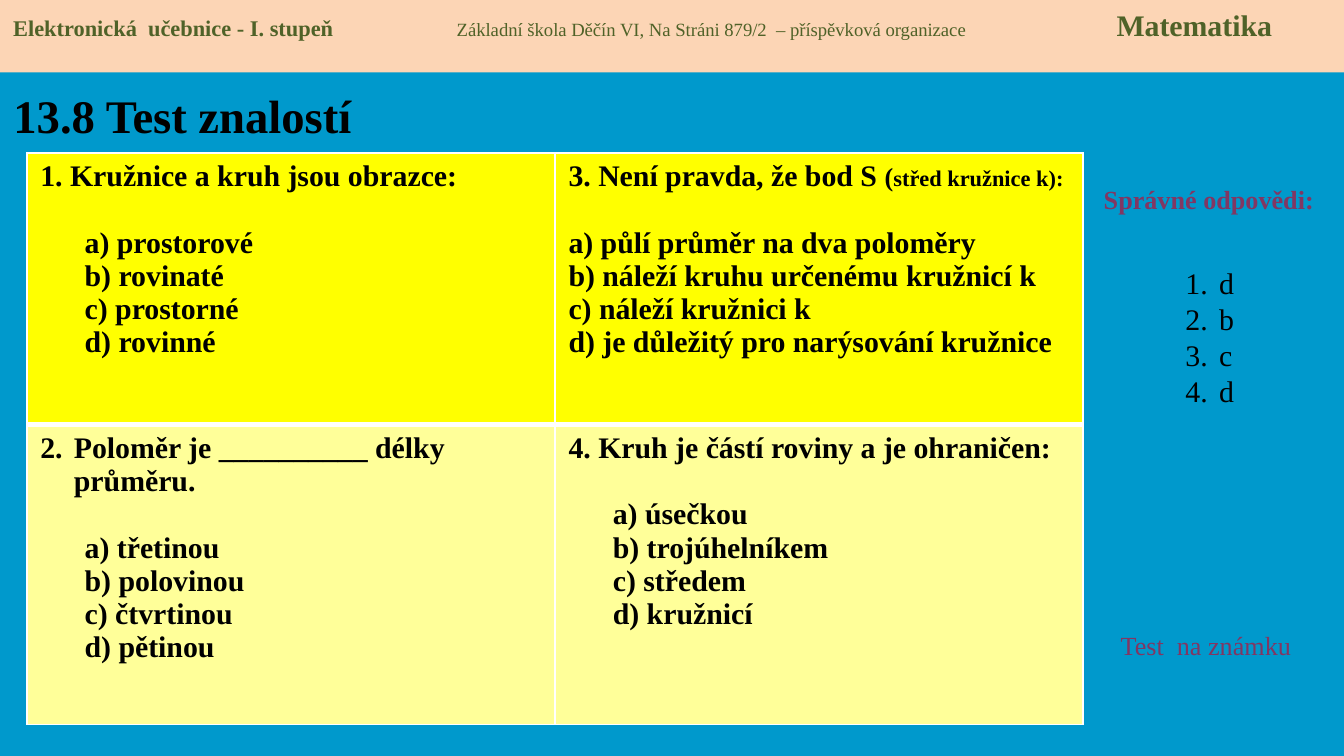
from lxml.etree import SubElement as Sub
from pptx import Presentation as Deck
from pptx.dml.color import RGBColor as Rgb
from pptx.enum.shapes import MSO_SHAPE as Shape
from pptx.enum.text import MSO_ANCHOR as Anchor, MSO_AUTO_SIZE as Fit, PP_ALIGN as Align
from pptx.oxml import parse_xml as parse
from pptx.oxml.ns import nsdecls, qn
from pptx.util import Inches, Pt

FONT = "Times New Roman"
BLACK, WHITE, PLUM, GREEN = "000000", "FFFFFF", "813763", "4F6228"


def tint(fill, code):
    fill.solid()
    fill.fore_color.rgb = Rgb.from_string(code)


def write(par, text, size=16, bold=False, color=BLACK, align=Align.LEFT, after=0):
    par.alignment = align
    par.space_before, par.space_after = Pt(0), Pt(after)
    run = par.add_run()
    run.text = text
    font = run.font
    font.name, font.size, font.bold = FONT, Pt(size), bold
    font.color.rgb = Rgb.from_string(color)


def indent(par, left, first=0):
    props = par._p.get_or_add_pPr()
    props.set("marL", str(Inches(left)))
    props.set("indent", str(Inches(first)))
    return props


def count(par, start=1):
    props = indent(par, 0.25, -0.25)
    Sub(props, qn("a:buFont"), typeface=FONT)
    Sub(props, qn("a:buAutoNum"), type="arabicPeriod", startAt=str(start))


def tabs(par, stops):
    stop_list = Sub(par._p.get_or_add_pPr(), qn("a:tabLst"))
    for stop in stops:
        Sub(stop_list, qn("a:tab"), pos=str(Inches(stop)), algn="l")


def border(cell, sides):
    props = cell._tc.get_or_add_tcPr()
    for spot, (side, width) in enumerate(sides.items()):
        props.insert(spot, parse(
            f'<a:ln{side} {nsdecls("a")} w="{Pt(width)}"><a:solidFill>'
            f'<a:srgbClr val="{WHITE}"/></a:solidFill></a:ln{side}>'))


class Page:
    def __init__(self, back):
        self.deck = Deck()
        self.deck.slide_width, self.deck.slide_height = Inches(10), Inches(10 * 9 / 16)
        self.slide = self.deck.slides.add_slide(self.deck.slide_layouts[1])
        self.shapes = self.slide.shapes
        tint(self.slide.background.fill, back)

    def area(self, left, top, width, height):
        wide, high = self.deck.slide_width, self.deck.slide_height
        return [int(part * whole / 100) for part, whole in
                zip((left, top, width, height), (wide, high, wide, high))]

    def place(self, holder, box):
        holder.left, holder.top, holder.width, holder.height = self.area(*box)
        frame = holder.text_frame
        frame.auto_size, frame.word_wrap = Fit.NONE, True
        return frame

    def title(self, text, box):
        frame = self.place(self.shapes.title, box)
        frame.vertical_anchor = Anchor.MIDDLE
        write(frame.paragraphs[0], text, size=25, bold=True)

    def list(self, items, box):
        frame = self.place(self.slide.placeholders[1], box)
        frame.vertical_anchor = Anchor.TOP
        frame.margin_top, frame.margin_right = Inches(0.32), 0
        for spot, item in enumerate(items):
            par = frame.add_paragraph() if spot else frame.paragraphs[0]
            write(par, item)
            count(par)

    def label(self, text, box, **style):
        frame = self.shapes.add_textbox(*self.area(*box)).text_frame
        frame.word_wrap = True
        write(frame.paragraphs[0], text, size=14, color=PLUM, **style)

    def banner(self, parts, stops, box, color):
        bar = self.shapes.add_shape(Shape.RECTANGLE, *self.area(*box))
        bar.shadow.inherit = False
        tint(bar.fill, color)
        bar.line.fill.background()
        frame = bar.text_frame
        frame.vertical_anchor = Anchor.TOP
        par = frame.paragraphs[0]
        for text, size, bold in parts:
            write(par, text, size=size, bold=bold, color=GREEN)
        tabs(par, stops)

    def quiz(self, rows, fills, highs, box):
        grid = self.shapes.add_table(len(rows), len(rows[0]), *self.area(*box)).table
        for row, (tasks, fill, high) in enumerate(zip(rows, fills, highs)):
            grid.rows[row].height = self.area(0, 0, 0, high)[3]
            for col, task in enumerate(tasks):
                cell = grid.cell(row, col)
                tint(cell.fill, fill)
                border(cell, {"L": 1, "R": 1, "T": 3 if row else 1, "B": 1 if row else 3})
                self.task(cell.text_frame, *task)

    def task(self, frame, start, left, parts, answers):
        head = frame.paragraphs[0]
        for text, size in parts:
            write(head, text, size=size, bold=True, after=18)
        if start:
            count(head, start)
        for answer in answers:
            par = frame.add_paragraph()
            write(par, answer, bold=True)
            indent(par, left)

    def save(self):
        self.deck.save("out.pptx")


ROWS = [
    [(0, 0.33, [("1. Kružnice a kruh jsou obrazce:", 16)],
      ["a) prostorové", "b) rovinaté", "c) prostorné", "d) rovinné"]),
     (0, 0, [("3. Není pravda, že bod S ", 16), ("(", 14), ("střed kružnice k):", 12)],
      ["a) půlí průměr na dva poloměry", "b) náleží kruhu určenému kružnicí k",
       "c) náleží kružnici k", "d) je důležitý pro narýsování kružnice"])],
    [(2, 0.33, [("Poloměr je __________ délky průměru.", 16)],
      ["a) třetinou", "b) polovinou", "c) čtvrtinou", "d) pětinou"]),
     (0, 0.33, [("4. Kruh je částí roviny a je ohraničen:", 16)],
      ["a) úsečkou", "b) trojúhelníkem", "c) středem", "d) kružnicí"])],
]
HEAD = [("Elektronická  učebnice - I. stupeň\t", 12, True),
        ("Základní škola Děčín VI, Na Stráni 879/2  – příspěvková organizace\t", 10, False),
        ("Matematika", 16, True)]


def main():
    page = Page("0099CC")
    page.title("13.8 Test znalostí", (0, 9.42, 31.9, 11.56))
    page.label("Správné odpovědi:", (80.5, 23.4, 18.9, 6.04), bold=True, align=Align.CENTER)
    page.quiz(ROWS, ["FFFF00", "FFFF99"], [35.91, 39.65], (2, 20.27, 78.6, 75.56))
    page.list(["d", "b", "c", "d"], (87.2, 29.33, 5.5, 35.38))
    page.label("Test  na známku", (82.4, 82.38, 15.7, 6.04))
    page.banner(HEAD, [3.3, 8.21], (0, 0, 100, 9.6), "FCD5B5")
    page.save()


if __name__ == "__main__":
    main()
